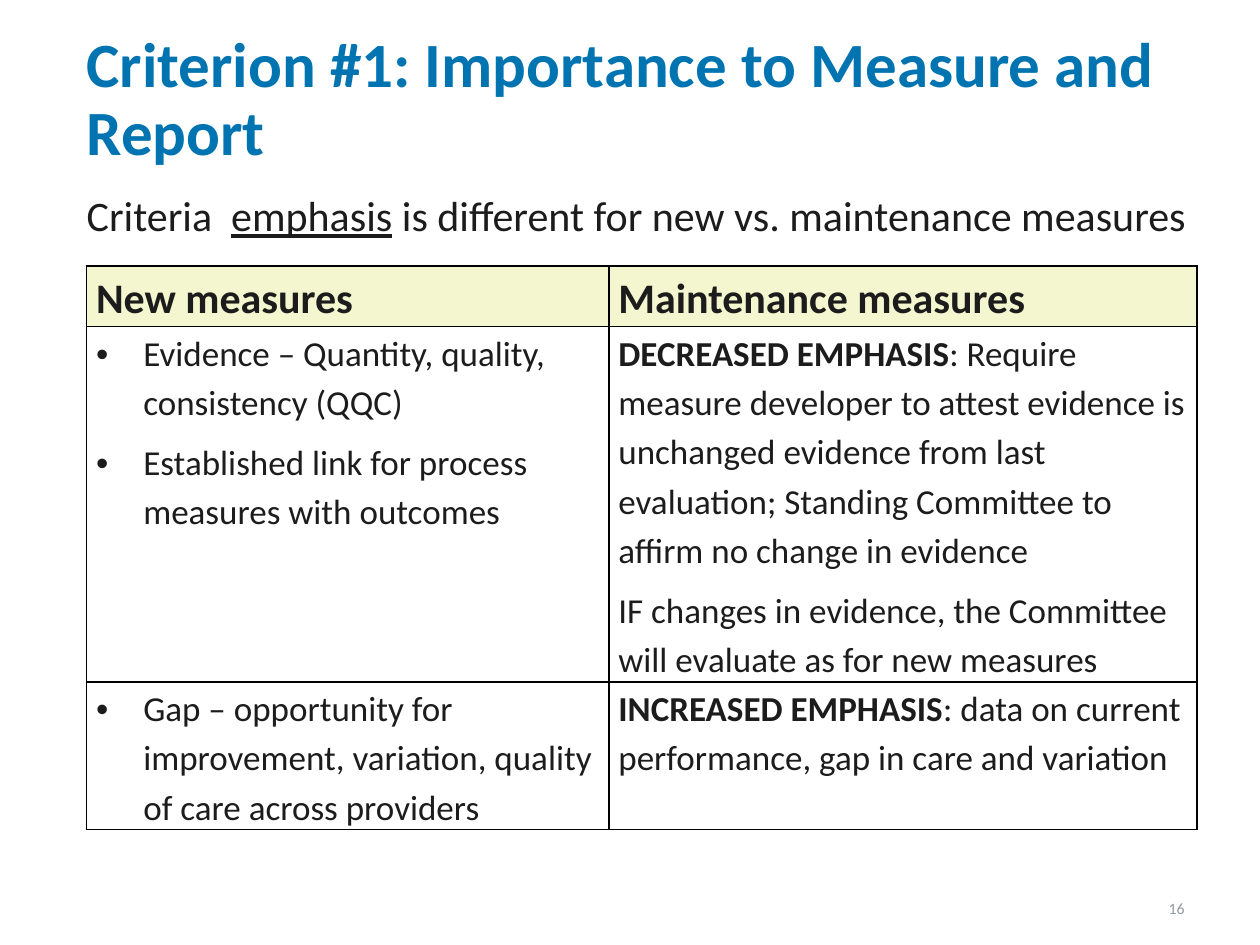
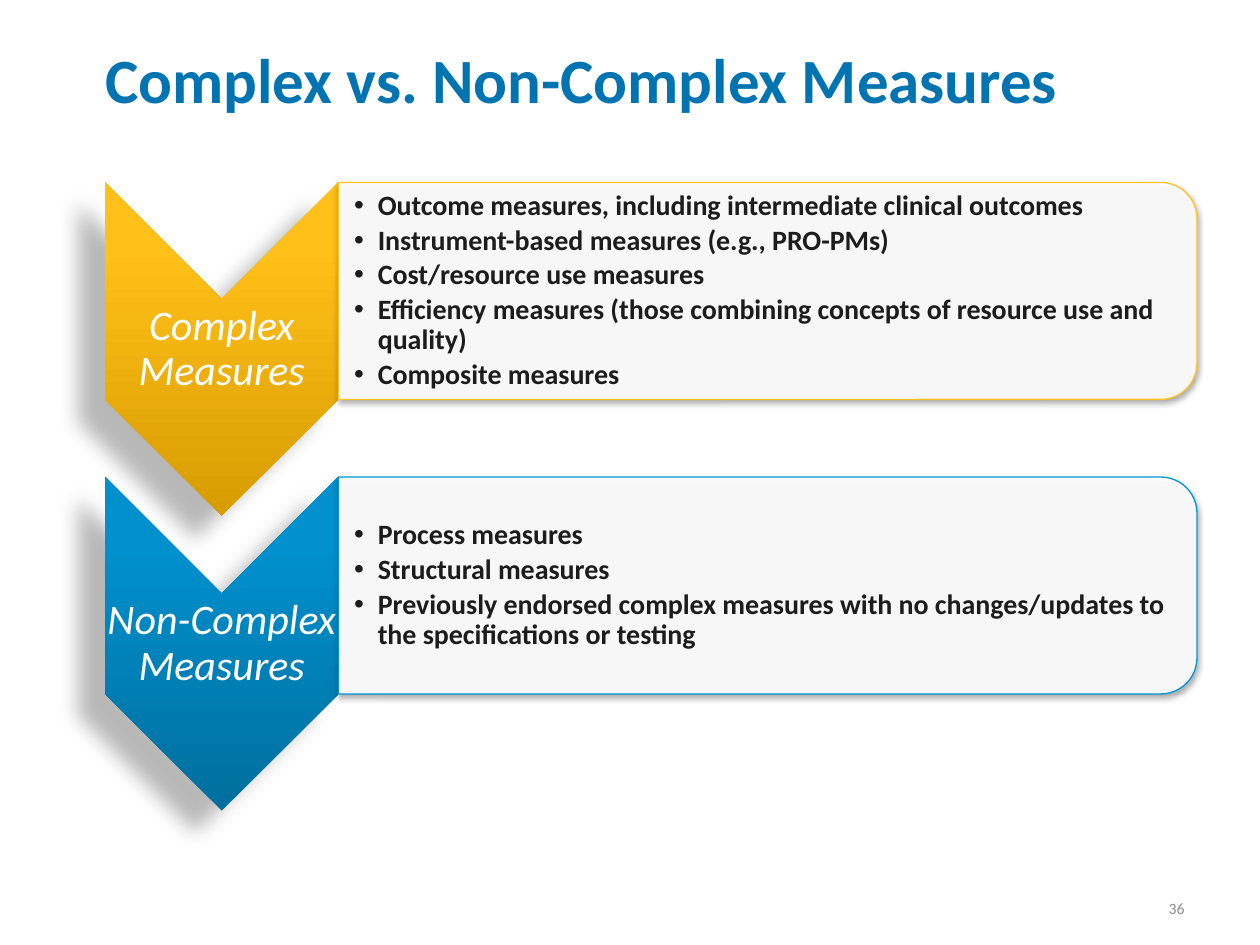
import pptx
import pptx.util
import pptx.dml.color
import pptx.enum.shapes
import pptx.enum.text
import pptx.oxml
import pptx.oxml.ns

Pt = pptx.util.Pt
SHAPES = pptx.enum.shapes.MSO_SHAPE
ALIGN = pptx.enum.text.PP_ALIGN
ANCHOR = pptx.enum.text.MSO_ANCHOR
COLORS = {
    "title": "0073B1", "text": "1C1C1C", "white": "FFFFFF", "border": "000000",
    "header": "F3F6CE", "table page": "93999E", "chart page": "8D8D8D",
    "gold line": "FFC222", "blue line": "0095D4",
}
GRADIENTS = {
    "gold": ((0, "D79C01"), (80, "FFC019"), (100, "FFC01A")),
    "blue": ((0, "006F9E"), (80, "0090CD"), (100, "0091CE")),
}
CHEVRON_SHADOW = (28, 11.8, 19.7, 141)
PANEL_SHADOW = (35, 3.1, 1.8, 90)


def rgb(name):
    return pptx.dml.color.RGBColor.from_string(COLORS[name])


def xml(markup):
    tag, rest = markup.split(" ", 1)
    return pptx.oxml.parse_xml(f"{tag} {pptx.oxml.ns.nsdecls('a')} {rest}")


class Deck:
    font = "Calibri"

    def __init__(self):
        self.presentation = pptx.Presentation()
        self.presentation.slide_width = Pt(720)
        self.presentation.slide_height = Pt(540)
        self.slide = None

    def start(self, title, left, top, width, height, page, page_color):
        self.slide = self.presentation.slides.add_slide(self.presentation.slide_layouts[5])
        heading = self.slide.shapes.title
        heading.left, heading.top, heading.width, heading.height = map(Pt, (left, top, width, height))
        self.frame(heading.text_frame, 0)
        self.paragraph(heading.text_frame, [(title, "b")], 36, "title", spacing=0.9)
        number = self.text(560.2, 509.8, 123.8, 24.5, (7.2, 3.6, 7.2, 3.6))
        self.paragraph(number, [(page, "")], 9, page_color, align=ALIGN.RIGHT)
        return heading.text_frame

    def frame(self, frame, insets, anchor=ANCHOR.TOP):
        frame.word_wrap = True
        frame.auto_size = pptx.enum.text.MSO_AUTO_SIZE.NONE
        frame.vertical_anchor = anchor
        sides = insets if isinstance(insets, tuple) else (insets,) * 4
        frame.margin_left, frame.margin_top, frame.margin_right, frame.margin_bottom = map(Pt, sides)

    def text(self, left, top, width, height, insets, anchor=ANCHOR.TOP):
        box = self.slide.shapes.add_textbox(*map(Pt, (left, top, width, height)))
        self.frame(box.text_frame, insets, anchor)
        return box.text_frame

    def paragraph(self, frame, runs, size, color, align=ALIGN.LEFT, spacing=1.0,
                  before=0, after=0, indent=0):
        paragraph = frame.paragraphs[0]
        if paragraph.runs:
            paragraph = frame.add_paragraph()
        if indent:
            properties = paragraph._p.get_or_add_pPr()
            properties.set("marL", str(Pt(indent)))
            properties.set("indent", str(-Pt(indent)))
            properties.append(xml('<a:buFont typeface="Arial"/>'))
            properties.append(xml('<a:buChar char="•"/>'))
        paragraph.alignment = align
        paragraph.line_spacing = spacing
        paragraph.space_before, paragraph.space_after = Pt(before), Pt(after)
        for words, style in runs:
            run = paragraph.add_run()
            run.text = words
            run.font.name, run.font.size = self.font, Pt(size)
            run.font.color.rgb = rgb(color)
            run.font.bold, run.font.italic, run.font.underline = (mark in style for mark in "biu")

    def table(self, left, top, columns, heights, rows):
        grid = self.slide.shapes.add_table(
            len(rows), len(columns), *map(Pt, (left, top, sum(columns), sum(heights)))).table
        grid.horz_banding = False
        for column, width in zip(grid.columns, columns):
            column.width = Pt(width)
        for index, (row, height) in enumerate(zip(rows, heights)):
            grid.rows[index].height = Pt(height)
            for position, paragraphs in enumerate(row):
                self.cell(grid.cell(index, position), paragraphs, index == 0, position == 0)

    def cell(self, cell, paragraphs, is_header, is_bulleted):
        cell.margin_left = cell.margin_right = Pt(5.4)
        cell.margin_top = cell.margin_bottom = 0
        for side in "LRTB":
            cell._tc.get_or_add_tcPr().append(xml(
                f'<a:ln{side} w="{Pt(1)}"><a:solidFill><a:srgbClr val="{COLORS["border"]}"/>'
                f'</a:solidFill></a:ln{side}>'))
        if is_header:
            cell.fill.solid()
            cell.fill.fore_color.rgb = rgb("header")
        else:
            cell.fill.background()
        for runs in paragraphs:
            self.paragraph(cell.text_frame, runs, 24 if is_header else 20, "text", spacing=1.15,
                           after=6, indent=27 if is_bulleted and not is_header else 0)

    def turned(self, kind, left, top, width, height, shadow):
        shift = (width - height) / 2
        shape = self.slide.shapes.add_shape(kind, *map(Pt, (left + shift, top - shift, height, width)))
        shape.rotation = 90
        shape.shadow.inherit = False
        opacity, blur, distance, angle = shadow
        effects = shape._element.spPr.find(pptx.oxml.ns.qn("a:effectLst"))
        effects.append(xml(
            f'<a:outerShdw blurRad="{Pt(blur)}" dist="{Pt(distance)}" dir="{angle * 60000}" '
            f'rotWithShape="0"><a:srgbClr val="000000"><a:alpha val="{opacity * 1000}"/>'
            f'</a:srgbClr></a:outerShdw>'))
        return shape

    def chevron(self, left, top, width, height, label, gradient):
        shape = self.turned(SHAPES.CHEVRON, left, top, width, height, CHEVRON_SHADOW)
        stops = "".join(f'<a:gs pos="{place * 1000}"><a:srgbClr val="{color}"/></a:gs>'
                        for place, color in GRADIENTS[gradient])
        shape._element.spPr.find(pptx.oxml.ns.qn("a:prstGeom")).addnext(xml(
            f'<a:gradFill rotWithShape="0"><a:gsLst>{stops}</a:gsLst>'
            f'<a:lin ang="16200000" scaled="0"/></a:gradFill>'))
        shape.line.fill.background()
        notch = width / 2
        words = self.text(left, top + notch, width, height - width, 1.2, ANCHOR.MIDDLE)
        self.paragraph(words, [(label, "i")], 24, "white", ALIGN.CENTER, 0.9)

    def panel(self, left, top, width, height, items, line):
        shape = self.turned(SHAPES.ROUND_2_SAME_RECTANGLE, left, top, width, height, PANEL_SHADOW)
        shape.fill.solid()
        shape.fill.fore_color.rgb = rgb("white")
        shape._element.spPr.find(".//" + pptx.oxml.ns.qn("a:srgbClr")).append(xml('<a:alpha val="90000"/>'))
        shape.line.color.rgb = rgb(line)
        shape.line.width = Pt(0.75)
        words = self.text(left, top + 6, width - 6, height - 12, (9, 0.8, 0.8, 0.8), ANCHOR.MIDDLE)
        for item in items:
            self.paragraph(words, [(item, "b")], 16, "text", spacing=0.9, after=2.6, indent=13.5)


def importance_slide(deck):
    heading = deck.start("Criterion #1: Importance to Measure and Report",
                         49.5, 18.7, 634.5, 90, "16", "table page")
    deck.paragraph(heading, [("Criteria  ", ""), ("emphasis", "u"),
                             (" is different for new vs. maintenance measures", "")],
                   24, "text", spacing=0.9, before=15)
    deck.table(49.5, 152, (298.5, 336), (34.6, 195, 81.4), [
        [[[("New measures", "b")]], [[("Maintenance measures", "b")]]],
        [[[("Evidence – Quantity, quality, consistency (QQC)", "")],
          [("Established link for process measures with outcomes", "")]],
         [[("DECREASED EMPHASIS", "b"),
           (": Require measure developer to attest evidence is unchanged evidence from last "
            "evaluation; Standing Committee to affirm no change in evidence", "")],
          [("IF changes in evidence, the Committee will evaluate as for new measures", "")]]],
        [[[("Gap – opportunity for improvement, variation, quality of care across providers", "")]],
         [[("INCREASED EMPHASIS", "b"),
           (": data on current performance, gap in care and variation", "")]]],
    ])


def complexity_slide(deck):
    deck.start("Complex vs. Non-Complex Measures", 60, 28.1, 624, 71.3, "36", "chart page")
    groups = [
        ("Complex Measures", "gold", [
            "Outcome measures, including intermediate clinical outcomes",
            "Instrument-based measures (e.g., PRO-PMs)",
            "Cost/resource use measures",
            "Efficiency measures (those combining concepts of resource use and quality)",
            "Composite measures"]),
        ("Non-Complex Measures", "blue", [
            "Process measures",
            "Structural measures",
            "Previously endorsed complex measures with no changes/updates to the "
            "specifications or testing"]),
    ]
    left, first_top, pitch, chevron_width = 60, 104.3, 168.3, 133.4
    for index, (label, color, items) in enumerate(groups):
        top = first_top + index * pitch
        deck.chevron(left, top, chevron_width, 190.6, label, color)
        deck.panel(left + chevron_width, top, 490.6, 124, items, f"{color} line")


def main():
    deck = Deck()
    importance_slide(deck)
    complexity_slide(deck)
    deck.presentation.save("out.pptx")


if __name__ == "__main__":
    main()
